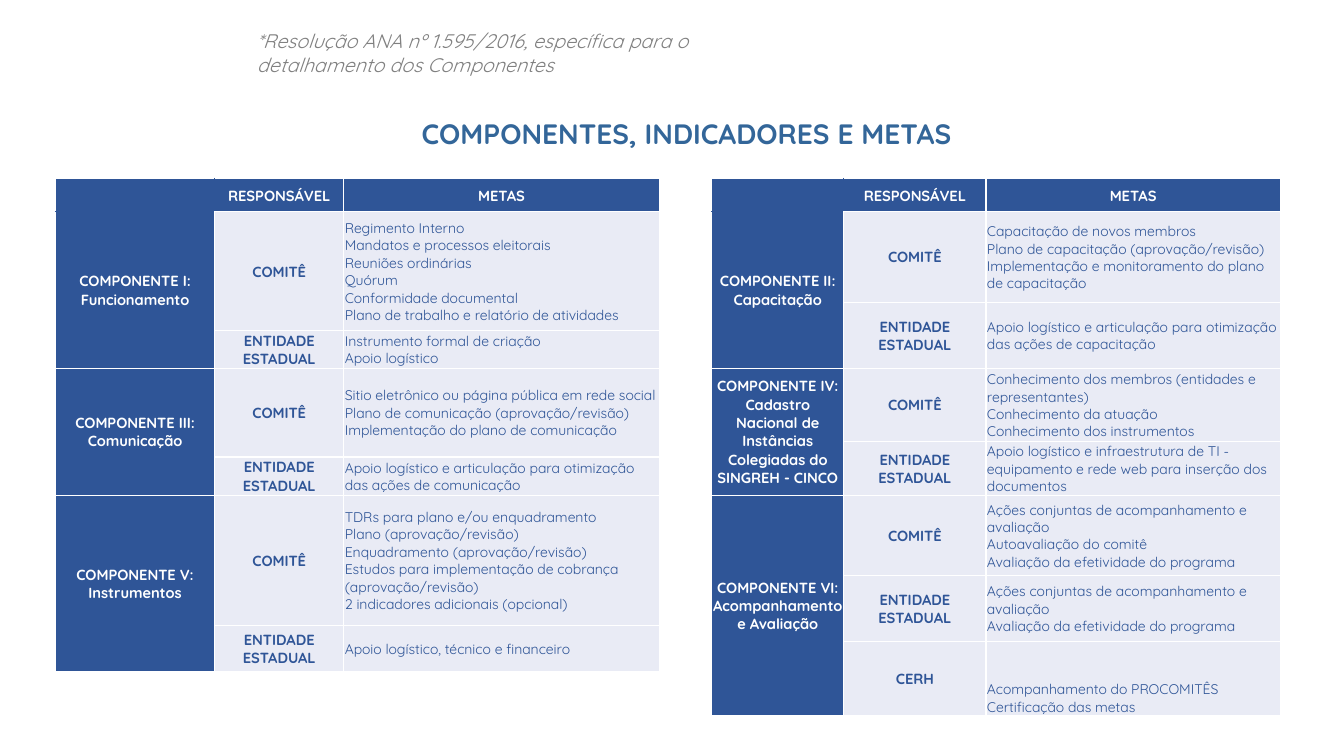
from copy import deepcopy

from lxml.etree import SubElement
from pptx import Presentation
from pptx.dml.color import RGBColor
from pptx.enum.text import MSO_ANCHOR, PP_ALIGN
from pptx.oxml.ns import qn
from pptx.util import Inches, Pt

UNIT = Inches(0.01)
FONT = "Quicksand"
HUES = {"blue": "2F5597", "pale": "E9EBF5", "white": "FFFFFF", "title": "336699", "gray": "808080"}
COLS = [158, 128, 313, 52, 131, 141, 292]
ROWS = [33, 90, 28, 36, 73, 15, 36, 80, 49, 16, 30, 44]
STATE = "ENTIDADE ESTADUAL"
LEFT = [
    ("COMPONENTE I: Funcionamento", [
        ("COMITÊ", 2, "Regimento Interno\nMandatos e processos eleitorais\nReuniões ordinárias\nQuórum\n"
         "Conformidade documental\nPlano de trabalho e relatório de atividades"),
        (STATE, 1, "Instrumento formal de criação\nApoio logístico")]),
    ("COMPONENTE III: Comunicação", [
        ("COMITÊ", 2, "Sitio eletrônico ou página pública em rede social\n"
         "Plano de comunicação (aprovação/revisão)\nImplementação do plano de comunicação"),
        (STATE, 1, "Apoio logístico e articulação para otimização das ações de comunicação")]),
    ("COMPONENTE V: Instrumentos", [
        ("COMITÊ", 2, "TDRs para plano e/ou enquadramento\nPlano (aprovação/revisão)\n"
         "Enquadramento (aprovação/revisão)\n"
         "Estudos para implementação de cobrança (aprovação/revisão)\n2 indicadores adicionais (opcional)"),
        (STATE, 2, "Apoio logístico, técnico e financeiro")]),
]
RIGHT = [
    ("COMPONENTE II: Capacitação", [
        ("COMITÊ", 1, "Capacitação de novos membros\nPlano de capacitação (aprovação/revisão)\n"
         "Implementação e monitoramento do plano de capacitação"),
        (STATE, 2, "Apoio logístico e articulação para otimização das ações de capacitação")]),
    ("COMPONENTE IV: Cadastro Nacional de Instâncias Colegiadas do SINGREH - CINCO", [
        ("COMITÊ", 1, "Conhecimento dos membros (entidades e representantes)\n"
         "Conhecimento da atuação\nConhecimento dos instrumentos"),
        (STATE, 2, "Apoio logístico e infraestrutura de TI - equipamento e rede web "
         "para inserção dos documentos")]),
    ("COMPONENTE VI: Acompanhamento e Avaliação", [
        ("COMITÊ", 1, "Ações conjuntas de acompanhamento e avaliação\nAutoavaliação do comitê\n"
         "Avaliação da efetividade do programa"),
        (STATE, 2, "Ações conjuntas de acompanhamento e avaliação\nAvaliação da efetividade do programa"),
        ("CERH", 2, "Acompanhamento do PROCOMITÊS\nCertificação das metas")]),
]


def write(frame, text, size, hue, bold=False, italic=False, align=PP_ALIGN.LEFT):
    """Fill a text frame with one formatted paragraph."""
    frame.word_wrap = True
    para = frame.paragraphs[0]
    para.text = text
    para.alignment = align
    for run in para.runs:
        font = run.font
        font.name, font.size, font.bold, font.italic = FONT, Pt(size), bold, italic
        font.color.rgb = RGBColor.from_string(HUES[hue])
    for line in para._p.findall(qn("a:br")):
        line.append(deepcopy(para.runs[0]._r.rPr))


def place(shape, box):
    """Move a shape to a box given in grid units."""
    shape.left, shape.top, shape.width, shape.height = [n * UNIT for n in box]


def fill(table, row, col, span, text, fore, back, size=10.5, bold=True, align=PP_ALIGN.CENTER):
    """Merge a run of rows and write its cell."""
    cell = table.cell(row, col)
    if span > 1:
        cell.merge(table.cell(row + span - 1, col))
    cell.fill.solid()
    cell.fill.fore_color.rgb = RGBColor.from_string(HUES[back])
    write(cell.text_frame, text, size, fore, bold=bold, align=align)


def edge(cell, hues):
    """Draw the left, right, top and bottom borders of a cell."""
    props = cell._tc.get_or_add_tcPr()
    for spot, (side, hue) in enumerate(zip("LRTB", hues)):
        line = SubElement(props, qn(f"a:ln{side}"), w=str(Pt(1)))
        paint = SubElement(line, qn("a:solidFill"))
        SubElement(paint, qn("a:srgbClr"), val=HUES[hue])
        props.insert(spot, line)


def half(table, col, parts):
    """Lay out one group of components from the given column."""
    for step, text in enumerate(["", "RESPONSÁVEL", "METAS"]):
        fill(table, 0, col + step, 1, text, "white", "blue")
    gap = col + 3
    row = 1
    for name, tasks in parts:
        total = sum(span for _, span, _ in tasks)
        fill(table, row, col, total, name, "white", "blue")
        for who, span, goals in tasks:
            fill(table, row, col + 1, span, who, "blue", "pale")
            fill(table, row, col + 2, span, goals, "blue", "pale", size=10, bold=False, align=PP_ALIGN.LEFT)
            if who == "CERH":
                table.cell(row, col + 2).vertical_anchor = MSO_ANCHOR.BOTTOM
            if gap < len(COLS) and span > 1:
                table.cell(row, gap).merge(table.cell(row + span - 1, gap))
            row += span


def grid(slide, box):
    """Build the table of components in its box."""
    table = slide.shapes.add_table(len(ROWS), len(COLS), *[n * UNIT for n in box]).table
    table.first_row = table.horz_banding = False
    for col, width in zip(table.columns, COLS):
        col.width = width * UNIT
    for row, height in zip(table.rows, ROWS):
        row.height = height * UNIT
    for cell in table.iter_cells():
        cell.margin_left = cell.margin_right = cell.margin_top = UNIT
        cell.margin_bottom = 0
        cell.vertical_anchor = MSO_ANCHOR.MIDDLE
        cell.fill.background()
    half(table, 0, LEFT)
    half(table, 4, RIGHT)
    for r in range(len(ROWS)):
        for c in range(len(COLS)):
            hues = ["white"] * 4
            if c in (0, 4) and r == 0:
                hues[1] = hues[3] = "blue"
            elif c in (1, 5) and r == 0:
                hues[0] = "blue"
            elif c in (0, 4) and r == 1:
                hues[2] = "blue"
            edge(table.cell(r, c), hues)


def head(slide, box):
    """Set the title in its box."""
    title = slide.shapes.title
    place(title, box)
    title.text_frame.vertical_anchor = MSO_ANCHOR.MIDDLE
    write(title.text_frame, "COMPONENTES, INDICADORES E METAS", 20, "title", bold=True, align=PP_ALIGN.CENTER)


def note(slide, box):
    """Add the note on the resolution in its box."""
    area = slide.shapes.add_textbox(*[n * UNIT for n in box])
    write(area.text_frame, "*Resolução ANA nº 1.595/2016, específica para o detalhamento dos Componentes",
          14, "gray", italic=True)


def main():
    """Build and save the slide."""
    deck = Presentation()
    deck.slide_width, deck.slide_height = 1333 * UNIT, 750 * UNIT
    slide = deck.slides.add_slide(deck.slide_layouts[5])
    head(slide, (228, 110, 906, 44))
    grid(slide, (55, 177, sum(COLS), sum(ROWS)))
    note(slide, (245, 24, 500, 57))
    deck.save("out.pptx")


if __name__ == "__main__":
    main()
